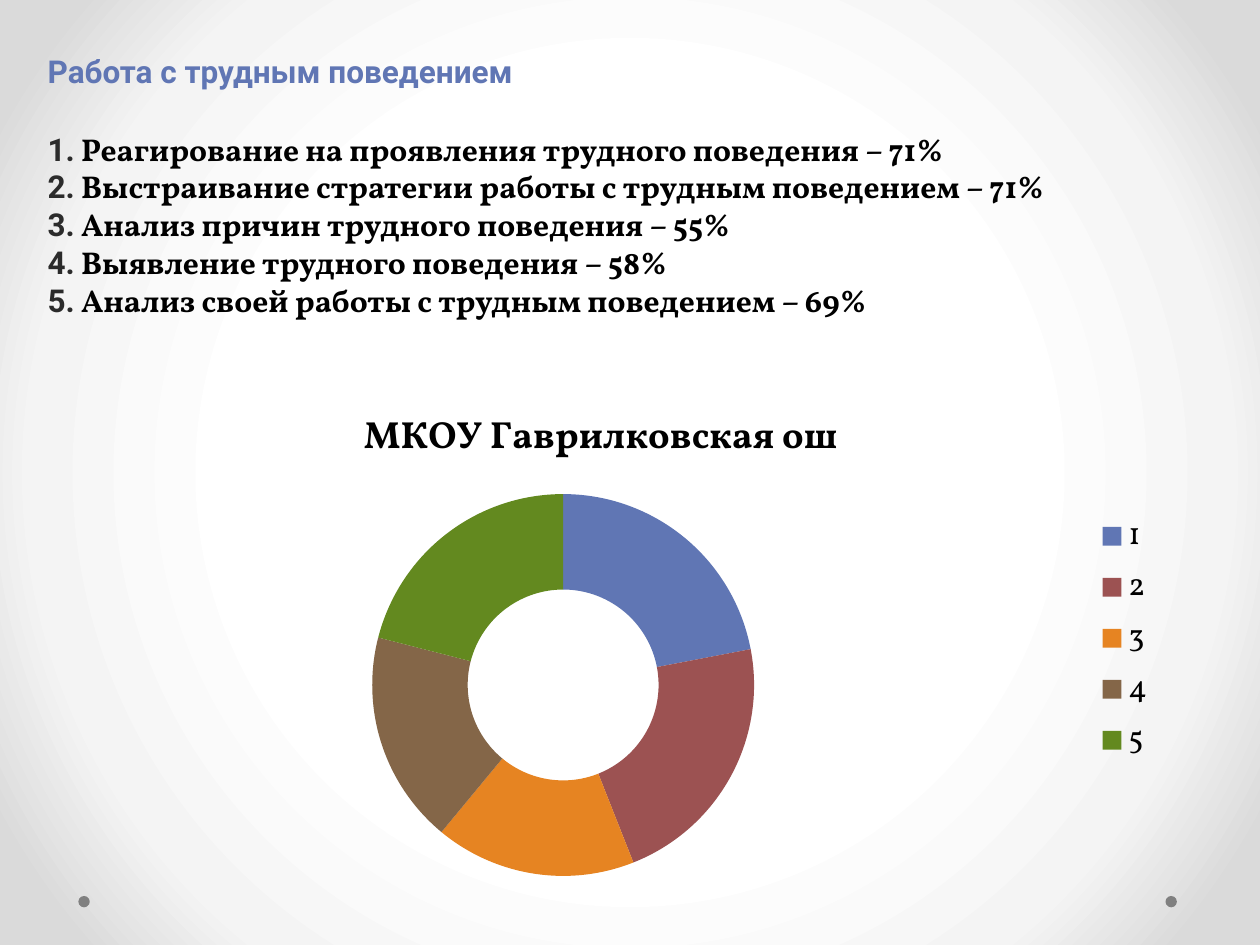
import pptx
import pptx.chart.data
import pptx.dml.color
import pptx.enum.chart
import pptx.enum.shapes
import pptx.enum.text
import pptx.oxml
import pptx.oxml.ns
import pptx.util

Pt = pptx.util.Pt

COLORS = {
    "heading": "6076B4",
    "number": "2B2B2B",
    "text": "000000",
    "dot": "808080",
}
SLICE_COLORS = ["6076B4", "9C5252", "E68422", "846648", "63891F"]
BACKGROUND_STOPS = {50: "FFFFFF", 76: "F4F4F4", 92: "DADADA"}

HEADING = {"name": "Roboto", "size": Pt(18), "bold": True, "color": COLORS["heading"]}
NUMBER = {**HEADING, "color": COLORS["number"]}
ITEM = {"name": "Vollkorn", "size": Pt(18), "bold": True, "color": COLORS["text"]}
CHART_TEXT = {**ITEM, "bold": False}
CHART_TITLE = {**ITEM, "size": Pt(21.6)}

ITEMS = [
    "Реагирование на проявления трудного поведения – 71%",
    "Выстраивание стратегии работы с трудным поведением – 71%",
    "Анализ причин трудного поведения – 55%",
    "Выявление трудного поведения – 58%",
    "Анализ своей работы с трудным поведением – 69%",
]
SHARES = [22, 22, 17, 18, 21]
SCHOOL = "МКОУ Гаврилковская ош"


def rgb(value):
    return pptx.dml.color.RGBColor.from_string(value)


def format_font(font, values):
    for name, value in values.items():
        if name == "color":
            font.color.rgb = rgb(value)
        else:
            setattr(font, name, value)


def add_span(para, text, values):
    span = para.add_run()
    span.text = text
    format_font(span.font, values)


def place(shape, box):
    for name, value in zip(("left", "top", "width", "height"), box):
        setattr(shape, name, Pt(value))


def prepare_frame(shape, box):
    place(shape, box)
    frame = shape.text_frame
    settings = {
        "word_wrap": True,
        "auto_size": pptx.enum.text.MSO_AUTO_SIZE.NONE,
        "vertical_anchor": pptx.enum.text.MSO_ANCHOR.TOP,
    }
    for name, value in settings.items():
        setattr(frame, name, value)
    return frame


def draw_background(page):
    stops = "".join(
        f'<a:gs pos="{position * 1000}"><a:srgbClr val="{color}"/></a:gs>'
        for position, color in BACKGROUND_STOPS.items()
    )
    background = pptx.oxml.parse_xml(
        f'<p:bg {pptx.oxml.ns.nsdecls("p", "a")}><p:bgPr>'
        f'<a:gradFill rotWithShape="1"><a:gsLst>{stops}</a:gsLst>'
        '<a:path path="circle">'
        '<a:fillToRect l="50000" t="50000" r="50000" b="50000"/>'
        "</a:path></a:gradFill><a:effectLst/></p:bgPr></p:bg>"
    )
    page.shapes._spTree.addprevious(background)


def draw_dot(page, box):
    dot = page.shapes.add_shape(
        pptx.enum.shapes.MSO_SHAPE.OVAL, *(Pt(value) for value in box)
    )
    dot.shadow.inherit = False
    dot.fill.solid()
    dot.fill.fore_color.rgb = rgb(COLORS["dot"])
    dot.line.fill.background()


def draw_heading(page, box):
    para = prepare_frame(page.shapes.title, box).paragraphs[0]
    para.alignment = pptx.enum.text.PP_ALIGN.LEFT
    add_span(para, "Работа с трудным поведением", HEADING)


def draw_list(page, box):
    frame = prepare_frame(page.placeholders[1], box)
    for number, item in enumerate(ITEMS, 1):
        para = frame.paragraphs[0] if number == 1 else frame.add_paragraph()
        para.space_before = Pt(0)
        para.line_spacing = Pt(21.6)
        properties = para._p.get_or_add_pPr()
        properties.set("marL", "0")
        properties.set("indent", "0")
        properties.append(
            pptx.oxml.parse_xml(f'<a:buNone {pptx.oxml.ns.nsdecls("a")}/>')
        )
        add_span(para, f"{number}.", NUMBER)
        add_span(para, f" {item}", ITEM)


def draw_chart(page, box):
    data = pptx.chart.data.CategoryChartData()
    data.categories = [str(number) for number in range(1, len(SHARES) + 1)]
    data.add_series(SCHOOL, SHARES)
    chart = page.shapes.add_chart(
        pptx.enum.chart.XL_CHART_TYPE.DOUGHNUT, *(Pt(value) for value in box), data
    ).chart
    format_font(chart.font, CHART_TEXT)
    chart.has_title = True
    add_span(chart.chart_title.text_frame.paragraphs[0], SCHOOL, CHART_TITLE)
    chart.has_legend = True
    chart.legend.position = pptx.enum.chart.XL_LEGEND_POSITION.RIGHT
    chart.legend.include_in_layout = False
    plot = chart.plots[0]
    plot.vary_by_categories = True
    plot.has_data_labels = False
    for index, color in enumerate(SLICE_COLORS):
        part = plot.series[0].points[index].format
        part.fill.solid()
        part.fill.fore_color.rgb = rgb(color)
        part.line.fill.background()


def main():
    deck = pptx.Presentation()
    deck.slide_width, deck.slide_height = Pt(720), Pt(540)
    page = deck.slides.add_slide(deck.slide_layouts[1])
    draw_background(page)
    for left in (666, 44.8):
        draw_dot(page, (left, 512, 6.5, 6.5))
    draw_chart(page, (19.5, 219, 648, 291.5))
    draw_heading(page, (20, 26, 680, 36))
    draw_list(page, (20, 70.5, 680, 120))
    deck.save("out.pptx")


if __name__ == "__main__":
    main()
